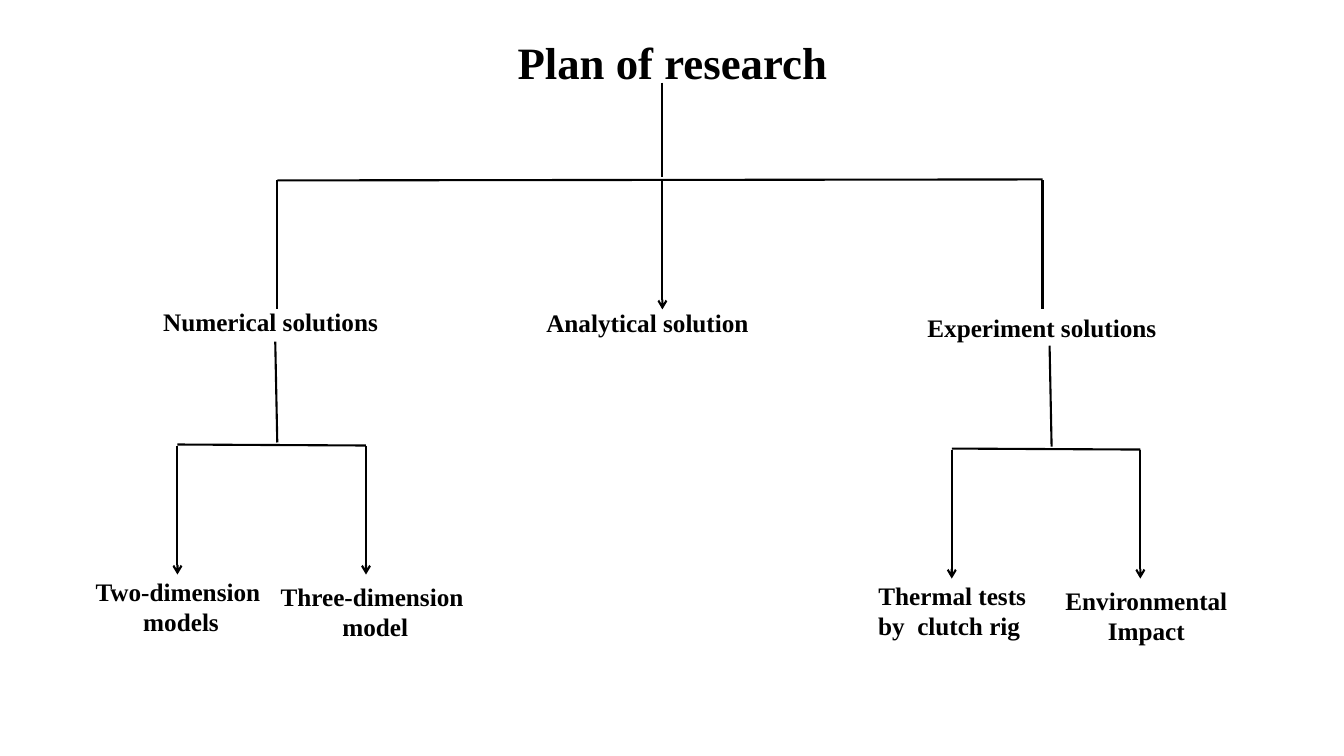
from lxml.etree import SubElement
from pptx import Presentation
from pptx.dml.color import RGBColor as RGB
from pptx.enum.shapes import MSO_CONNECTOR as CONN
from pptx.enum.text import MSO_AUTO_SIZE as FIT, PP_ALIGN as ALIGN
from pptx.oxml.ns import qn
from pptx.util import Inches, Pt

COLORS = {"ink": "000000", "page": "FFFFFF"}
FONT = {"name": "Times New Roman", "bold": True}
TITLE = {"line_spacing": 0.9, "space_before": Pt(10)}


def add_text(slide, box, text, size=18, align=ALIGN.LEFT, fit=FIT.SHAPE_TO_FIT_TEXT, form={}):
    """Place bold text in a box, one paragraph for each line."""
    frame = slide.shapes.add_textbox(*map(Inches, box)).text_frame
    frame.word_wrap = True
    frame.auto_size = fit
    for num, line in enumerate(text.split("\n")):
        para = frame.add_paragraph() if num else frame.paragraphs[0]
        for key, value in {"alignment": align, **form}.items():
            setattr(para, key, value)
        run = para.add_run()
        run.text = line
        for key, value in {**FONT, "size": Pt(size)}.items():
            setattr(run.font, key, value)
        run.font.color.rgb = RGB.from_string(COLORS["ink"])


def add_line(slide, x, y, ends, arrow=False):
    """Draw a line between two ends given relative to x, y."""
    x1, y1, x2, y2 = ends
    line = slide.shapes.add_connector(
        CONN.STRAIGHT, Inches(x + x1), Inches(y + y1), Inches(x + x2), Inches(y + y2))
    line.line.width = Pt(1.5)
    line.line.color.rgb = RGB.from_string(COLORS["ink"])
    if arrow:
        SubElement(line.line._get_or_add_ln(), qn("a:tailEnd"), type="arrow")
    SubElement(line._element.spPr, qn("a:effectLst"))


def add_top(slide, box, heads):
    """Draw the title, the three main branches and their heads."""
    x, y, wide, high = box
    mid = 3.82
    add_text(slide, (0.92, 0.36, 11.5, 6.4), "Plan of research", 32, ALIGN.CENTER, FIT.NONE, TITLE)
    add_line(slide, x, y, (mid, -0.97, mid, -0.03))
    add_line(slide, x, y, (0, 0, wide, -0.01))
    for drop in (0, mid, wide):
        add_line(slide, x, y, (drop, 0, drop, high), drop == mid)
    for left, top, head in heads:
        add_text(slide, (left, top, 2.74, 0.4), head)


def add_fork(slide, box, first, second):
    """Draw a stem that parts into two arrows with a caption under each."""
    x, y, wide, high = box
    bar = 1.03
    add_line(slide, x, y, (0.97, 0, 0.99, 1))
    add_line(slide, x, y, (0, bar - 0.01, wide, bar))
    for drop in (0, wide):
        add_line(slide, x, y, (drop, bar, drop, high), True)
    add_text(slide, (x - 0.96, y + 2.28, 1.93, 0.71), first, align=ALIGN.CENTER)
    add_text(slide, (x + 0.91, y + 2.33, 2.04, 0.71), second, align=ALIGN.CENTER)


def main():
    """Build the research plan slide."""
    deck = Presentation()
    deck.slide_width, deck.slide_height = Inches(13.33), Inches(7.5)
    slide = deck.slides.add_slide(deck.slide_layouts[6])
    fill = slide.background.fill
    fill.solid()
    fill.fore_color.rgb = RGB.from_string(COLORS["page"])
    add_top(slide, (2.75, 1.79, 7.59, 1.28), [
        (1.52, 2.99, "Numerical solutions"),
        (5.32, 3, "Analytical solution"),
        (9.1, 3.05, "Experiment solutions"),
    ])
    add_fork(slide, (1.76, 3.39, 1.87, 2.31),
             "Two-dimension\n models", "Three-dimension\n model")
    add_fork(slide, (9.44, 3.43, 1.87, 2.31),
             "Thermal tests by  clutch rig ", "Environmental Impact")
    deck.save("out.pptx")


if __name__ == "__main__":
    main()
